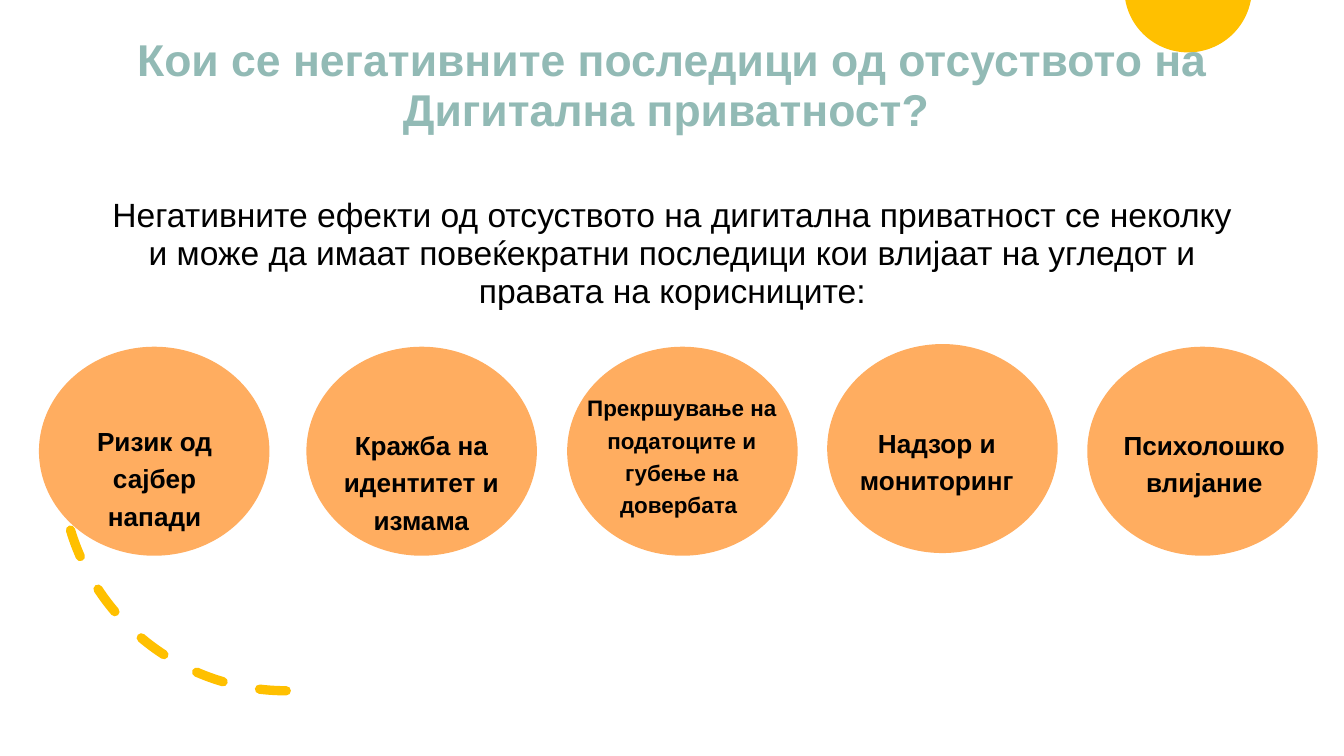
"""Builds a slide on the negative consequences of lacking digital privacy."""
import math

import lxml.etree
import pptx
import pptx.dml.color
import pptx.enum.dml
import pptx.enum.shapes
import pptx.enum.text
import pptx.oxml.ns
import pptx.util


def paint(target, colour):
    if hasattr(target, "solid"):
        target.solid()
        target = target.fore_color
    target.rgb = pptx.dml.color.RGBColor.from_string(colour)


def write(paragraph, text, size=28, bold=True, colour="000000", spacing=1.2, before=0):
    paragraph.alignment = pptx.enum.text.PP_ALIGN.CENTER
    paragraph.line_spacing = spacing
    paragraph.space_before = pptx.util.Pt(before)
    run = paragraph.add_run()
    run.text = text
    run.font.name = "Arial"
    run.font.size = pptx.util.Pt(size)
    run.font.bold = bold
    paint(run.font.color, colour)


deck = pptx.Presentation()
deck.slide_width = pptx.util.Inches(20)
deck.slide_height = pptx.util.Inches(11.25)
column = deck.slide_width / 20
row = deck.slide_height / 11.25
slide = deck.slides.add_slide(deck.slide_layouts[5])
shapes = slide.shapes
paint(slide.background.fill, "FFFFFF")

sun_x, sun_y, sun_radius = 17.68, -0.17, 0.95
horizon = math.asin(-sun_y / sun_radius)
rim = []
for step in range(61):
    angle = horizon + (math.pi - 2 * horizon) * step / 60
    rim.append((
        round(column * (sun_x + sun_radius * math.cos(angle))),
        round(row * (sun_y + sun_radius * math.sin(angle))),
    ))
outline = shapes.build_freeform(*rim[0])
outline.add_line_segments(rim[1:], close=True)
sun = outline.convert_to_shape()
sun.shadow.inherit = False
paint(sun.fill, "FFC000")
sun.line.fill.background()

heading = shapes.title
heading.left, heading.width = round(1.38 * column), round(17.25 * column)
heading.top, heading.height = round(1.57 * row), round(3.11 * row)
frame = heading.text_frame
frame.word_wrap = True
frame.auto_size = pptx.enum.text.MSO_AUTO_SIZE.NONE
frame.vertical_anchor = pptx.enum.text.MSO_ANCHOR.BOTTOM
write(
    frame.paragraphs[0],
    "Кои се негативните последици од отсуството на Дигитална приватност? ",
    size=47.7, colour="92BAB5", spacing=0.94,
)
write(
    frame.add_paragraph(),
    "Негативните ефекти од отсуството на дигитална приватност се неколку и може да "
    "имаат повеќекратни последици кои влијаат на угледот и правата на корисниците:",
    size=36, bold=False, spacing=0.94, before=65,
)

swoosh = shapes.add_shape(
    pptx.enum.shapes.MSO_SHAPE.ARC,
    round(0.91 * column), round(3.58 * row), round(6.7 * column), round(6.7 * row),
)
swoosh.rotation = 270
swoosh.shadow.inherit = False
swoosh.fill.background()
paint(swoosh.line.fill, "FFC000")
swoosh.line.width = pptx.util.Pt(10)
swoosh.line.dash_style = pptx.enum.dml.MSO_LINE.DASH
properties = swoosh.element.spPr
properties.find(pptx.oxml.ns.qn("a:xfrm")).set("flipH", "1")
properties.find(pptx.oxml.ns.qn("a:ln")).set("cap", "rnd")

consequences = [
    ("Ризик од сајбер напади", 28, 0.58, 5.16, 1.07, 6.23, 2.46, 0.94),
    ("Кражба на идентитет и измама", 28, 4.56, 5.16, 4.8, 6.29, 2.94, 0.94),
    ("Прекршување на податоците и губење на довербата ", 24, 8.44, 5.16, 8.54, 5.79, 3.21, 1.94),
    ("Надзор и мониторинг", 28, 12.31, 5.12, 12.55, 6.26, 2.78, 0.94),
    ("Психолошко влијание", 28, 16.18, 5.16, 16.53, 6.29, 2.78, 0.94),
]
for consequence, size, left, top, label_left, label_top, label_width, label_height in consequences:
    bubble = shapes.add_shape(
        pptx.enum.shapes.MSO_SHAPE.OVAL,
        round(left * column), round(top * row), round(3.43 * column), round(3.11 * row),
    )
    bubble.shadow.inherit = False
    paint(bubble.fill, "FFAD60")
    bubble.line.fill.background()
    label = shapes.add_textbox(
        round(label_left * column), round(label_top * row),
        round(label_width * column), round(label_height * row),
    ).text_frame
    label.margin_left = label.margin_right = label.margin_top = label.margin_bottom = 0
    label.word_wrap = True
    label.auto_size = pptx.enum.text.MSO_AUTO_SIZE.SHAPE_TO_FIT_TEXT
    write(label.paragraphs[0], consequence, size=size)

tree = shapes.element
tree.remove(heading.element)
tree.insert(tree.index(sun.element) + 1, heading.element)

deck.save("out.pptx")
